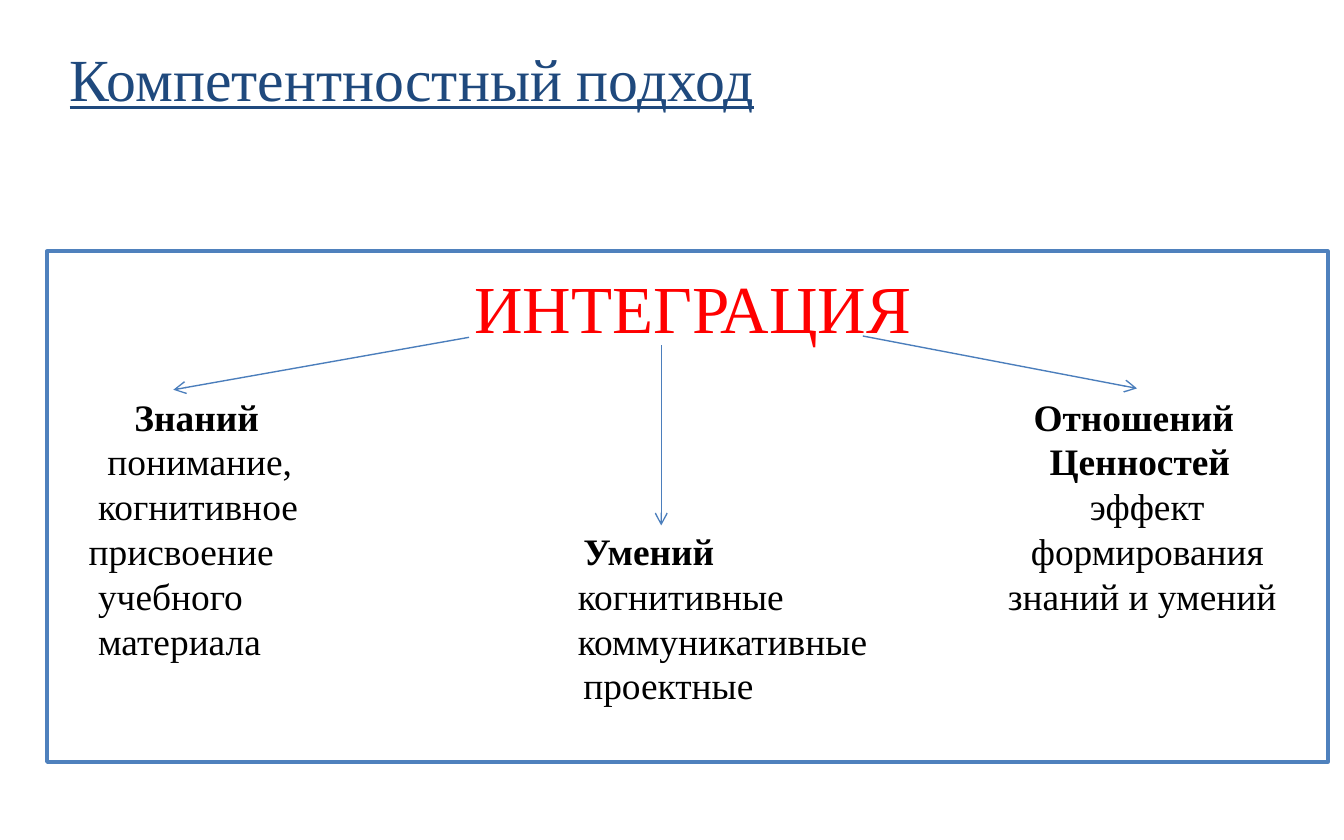
import lxml.etree
import pptx
import pptx.dml.color
import pptx.enum.shapes
import pptx.enum.text
import pptx.oxml.ns
import pptx.util
from pptx.util import Inches

FONT = "Times New Roman"
COLUMNS = [
    (0.66, 2.93, 2.2, [
        ("Знаний", True, 0.34), ("понимание,", False, 0.14),
        ("когнитивное", False, 0.07), ("присвоение", False, 0),
        ("учебного", False, 0.07), ("материала", False, 0.07)]),
    (4.3, 3.93, 2.5, [
        ("Умений", True, 0.04), ("когнитивные", False, 0),
        ("коммуникативные", False, 0), ("проектные", False, 0.04)]),
    (7.5, 2.93, 2.3, [
        ("Отношений", True, 0.19), ("Ценностей", True, 0.31),
        ("эффект", False, 0.61), ("формирования", False, 0.17),
        ("знаний и умений", False, 0)]),
]
ARROWS = [(3.49, 2.51, 1.29, 2.9), (4.92, 2.57, 4.92, 3.91), (6.42, 2.5, 8.46, 2.89)]


def color(value):
    """Turn a hex string into a colour."""
    return pptx.dml.color.RGBColor.from_string(value)


def style(paragraph, size, value, bold=False):
    """Set the font of a whole paragraph."""
    font = paragraph.font
    font.name = FONT
    font.size = pptx.util.Pt(size)
    font.bold = bold
    font.color.rgb = color(value)


def add_title(page, text):
    """Add the underlined slide title."""
    box = page.shapes.add_textbox(Inches(0.42), Inches(0.21), Inches(9), Inches(0.75))
    frame = box.text_frame
    frame.word_wrap = True
    frame.margin_top = Inches(0.1)
    paragraph = frame.paragraphs[0]
    paragraph.text = text
    style(paragraph, 32, "1F497D")
    paragraph.font.underline = True


def add_panel(page, heading):
    """Add the outlined panel with its centred heading."""
    panel = page.shapes.add_shape(
        pptx.enum.shapes.MSO_SHAPE.RECTANGLE,
        Inches(0.35), Inches(1.87), Inches(9.53), Inches(3.8))
    panel.shadow.inherit = False
    panel.fill.solid()
    panel.fill.fore_color.rgb = color("FFFFFF")
    panel.line.color.rgb = color("4F81BD")
    panel.line.width = pptx.util.Pt(2)
    frame = panel.text_frame
    frame.vertical_anchor = pptx.enum.text.MSO_ANCHOR.TOP
    frame.margin_top = Inches(0.11)
    frame.margin_left = Inches(0.18)
    paragraph = frame.paragraphs[0]
    paragraph.text = heading
    paragraph.alignment = pptx.enum.text.PP_ALIGN.CENTER
    style(paragraph, 36, "FF0000")


def add_column(page, left, top, width, lines):
    """Add a column of lines, each given as text, bold and indent."""
    pitch = 24
    box = page.shapes.add_textbox(
        Inches(left), Inches(top), Inches(width), pptx.util.Pt(pitch * len(lines)))
    frame = box.text_frame
    frame.word_wrap = True
    frame.margin_left = frame.margin_right = frame.margin_top = frame.margin_bottom = 0
    for index, (text, bold, indent) in enumerate(lines):
        paragraph = frame.add_paragraph() if index else frame.paragraphs[0]
        paragraph.text = text
        paragraph.line_spacing = pptx.util.Pt(pitch)
        style(paragraph, 20, "000000", bold)
        paragraph._p.get_or_add_pPr().set("marL", str(int(Inches(indent))))


def add_arrow(page, start_x, start_y, end_x, end_y):
    """Add a thin line with an open arrowhead at its end."""
    arrow = page.shapes.add_connector(
        pptx.enum.shapes.MSO_CONNECTOR.STRAIGHT,
        Inches(start_x), Inches(start_y), Inches(end_x), Inches(end_y))
    arrow.line.color.rgb = color("4B7EBC")
    arrow.line.width = pptx.util.Pt(0.75)
    properties = arrow._element.spPr
    outline = properties.find(pptx.oxml.ns.qn("a:ln"))
    lxml.etree.SubElement(outline, pptx.oxml.ns.qn("a:tailEnd"), type="arrow")
    lxml.etree.SubElement(properties, pptx.oxml.ns.qn("a:effectLst"))


def main():
    """Build the slide and save the deck."""
    deck = pptx.Presentation()
    deck.slide_width = Inches(10)
    deck.slide_height = Inches(6.25)
    page = deck.slides.add_slide(deck.slide_layouts[6])
    add_title(page, "Компетентностный подход")
    add_panel(page, "ИНТЕГРАЦИЯ")
    for column in COLUMNS:
        add_column(page, *column)
    for arrow in ARROWS:
        add_arrow(page, *arrow)
    deck.save("out.pptx")


if __name__ == "__main__":
    main()
